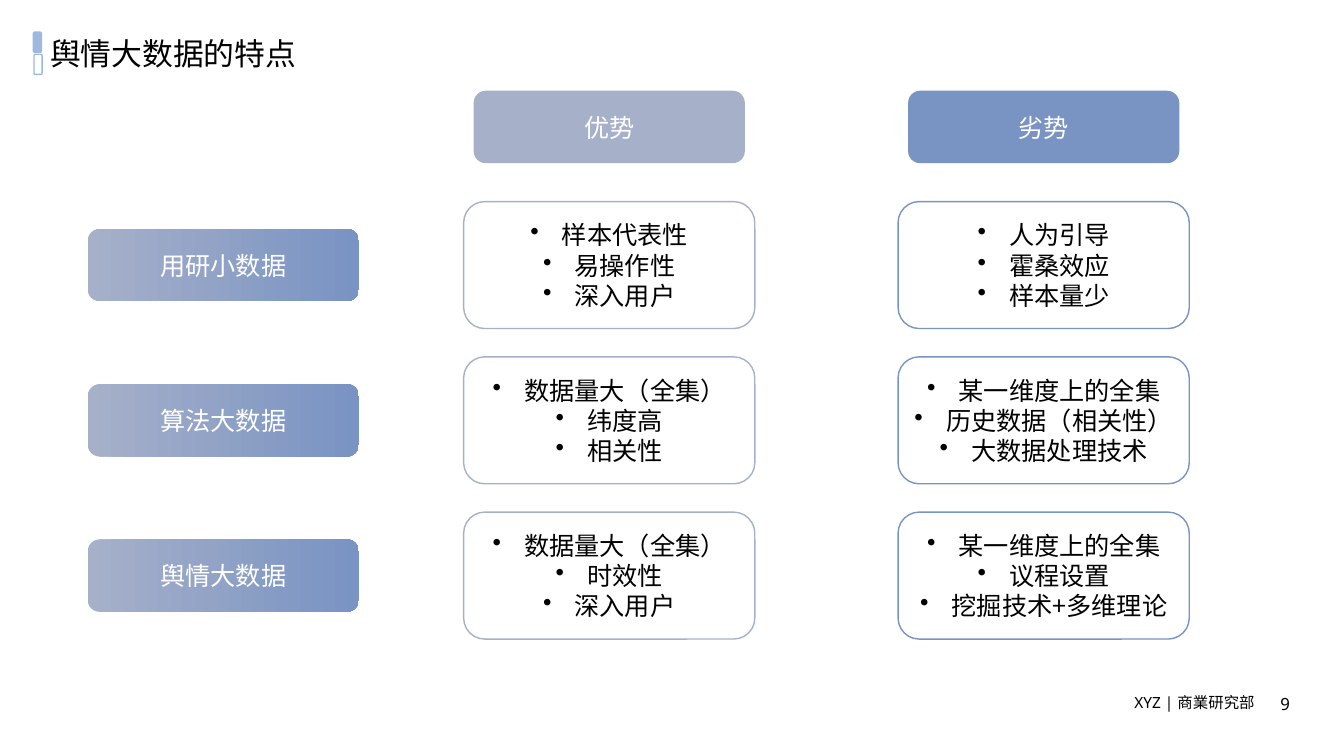
import dataclasses

import pptx
import pptx.dml.color
import pptx.enum.dml
import pptx.enum.shapes
import pptx.enum.text
import pptx.oxml
import pptx.oxml.ns
import pptx.util

Pt = pptx.util.Pt
CENTER = pptx.enum.text.PP_ALIGN.CENTER
LEFT = pptx.enum.text.PP_ALIGN.LEFT
MIDDLE = pptx.enum.text.MSO_ANCHOR.MIDDLE
TOP = pptx.enum.text.MSO_ANCHOR.TOP


@dataclasses.dataclass(frozen=True)
class Theme:
    black: str = "000000"
    white: str = "FFFFFF"
    accent: str = "9DB9E0"
    strength: str = "A6B0C9"
    weakness: str = "7993C3"
    plain_font: str = "Noto Sans"
    body_font: str = "Noto Sans CJK SC"
    title_size: float = 22
    body_size: float = 18
    number_size: float = 12
    footer_size: float = 11


@dataclasses.dataclass(frozen=True)
class Box:
    left: float
    top: float
    width: float
    height: float

    def lengths(self):
        return [Pt(value) for value in dataclasses.astuple(self)]


THEME = Theme()
ROWS = [
    ("用研小数据", ["样本代表性", "易操作性", "深入用户"],
     ["人为引导", "霍桑效应", "样本量少"]),
    ("算法大数据", ["数据量大（全集）", "纬度高", "相关性"],
     ["某一维度上的全集", "历史数据（相关性）", "大数据处理技术"]),
    ("舆情大数据", ["数据量大（全集）", "时效性", "深入用户"],
     ["某一维度上的全集", "议程设置", "挖掘技术+多维理论"]),
]
COLUMNS = [("优势", THEME.strength), ("劣势", THEME.weakness)]


def rgb(color):
    return pptx.dml.color.RGBColor.from_string(color)


def add_bullet(para):
    properties = para.font._element.getparent()
    properties.set("marL", str(Pt(22.5)))
    properties.set("indent", str(-Pt(22.5)))
    bullet = pptx.oxml.parse_xml(
        f'<a:buChar {pptx.oxml.ns.nsdecls("a")} char="•"/>')
    para.font._element.addprevious(bullet)


def write(frame, lines, size, color, font, align=CENTER, anchor=MIDDLE, bullets=False):
    frame.word_wrap = True
    frame.vertical_anchor = anchor
    for index, line in enumerate(lines):
        para = frame.add_paragraph() if index else frame.paragraphs[0]
        para.text = line
        para.alignment = align
        para.font.size = Pt(size)
        para.font.name = font
        para.font.color.rgb = rgb(color)
        east_asian = pptx.oxml.parse_xml(
            f'<a:ea {pptx.oxml.ns.nsdecls("a")} typeface="{font}"/>')
        para.font._element.append(east_asian)
        if bullets:
            add_bullet(para)


def add_text(page, box, text, size, **layout):
    frame = page.shapes.add_textbox(*box.lengths()).text_frame
    write(frame, [text], size, THEME.black, THEME.plain_font, **layout)


def add_rounded(page, box, fill=None, line=None):
    """Draw a rounded box; a pair of colours as fill makes a gradient."""
    shape = page.shapes.add_shape(
        pptx.enum.shapes.MSO_SHAPE.ROUNDED_RECTANGLE, *box.lengths())
    shape.shadow.inherit = False
    if fill is None:
        shape.fill.background()
    elif isinstance(fill, tuple):
        shape.fill.gradient()
        shape.fill.gradient_angle = 0
        for stop, color in zip(shape.fill.gradient_stops, fill):
            stop.color.rgb = rgb(color)
    else:
        shape.fill.solid()
        shape.fill.fore_color.rgb = rgb(fill)
    if line:
        shape.line.color.rgb = rgb(line)
        shape.line.width = Pt(1)
    else:
        shape.line.fill.background()
    return shape


def add_label(page, box, text, fill):
    shape = add_rounded(page, box, fill)
    write(shape.text_frame, [text], THEME.body_size, THEME.white, THEME.body_font)


def add_card(page, box, lines, color):
    shape = add_rounded(page, box, line=color)
    write(shape.text_frame, lines, THEME.body_size, THEME.black,
          THEME.body_font, bullets=True)


def add_title(page, box, text):
    for index, fill in enumerate([THEME.accent, THEME.white]):
        marker = Box(box.left + index * 0.5, box.top + index * 15.8, 5.8, 14.4)
        add_rounded(page, marker, fill, THEME.accent)
    add_text(page, Box(box.left + 5, box.top - 0.7, box.width - 5, box.height),
             text, THEME.title_size, align=LEFT)


def add_comparison(page, box):
    """Lay out row labels, column headers and bullet cards."""
    label_width, label_height = 193.7, 51.8
    card_width, card_height = 208, 90.7
    first_card, column_step = 268.6, 310.3
    first_row, row_step = 79.2, 110.9
    card_lefts = [box.left + first_card + index * column_step
                  for index in range(len(COLUMNS))]

    for left, (heading, color) in zip(card_lefts, COLUMNS):
        center = left + (card_width - label_width) / 2
        add_label(page, Box(center, box.top, label_width, label_height), heading, color)

    for index, (name, *cards) in enumerate(ROWS):
        top = box.top + first_row + index * row_step
        label = Box(box.left, top + (card_height - label_height) / 2,
                    label_width, label_height)
        add_label(page, label, name, (THEME.strength, THEME.weakness))
        for left, lines, (_, color) in zip(card_lefts, cards, COLUMNS):
            add_card(page, Box(left, top, card_width, card_height), lines, color)


def add_footer(page, box):
    add_text(page, Box(box.left, box.top + 0.7, 103.7, 20.9),
             "XYZ | 商業研究部", THEME.footer_size, anchor=TOP)
    add_text(page, Box(box.left + 87.1, box.top, 59, box.height),
             "9", THEME.number_size)


def main():
    deck = pptx.Presentation()
    deck.slide_width, deck.slide_height = Pt(960), Pt(540)
    page = deck.slides.add_slide(deck.slide_layouts[6])
    add_title(page, Box(23.8, 23, 909.3, 31), "舆情大数据的特点")
    add_comparison(page, Box(62.6, 64.8, 787, 391.7))
    add_footer(page, Box(801.4, 491, 146.1, 23))
    deck.save("out.pptx")


if __name__ == "__main__":
    main()
